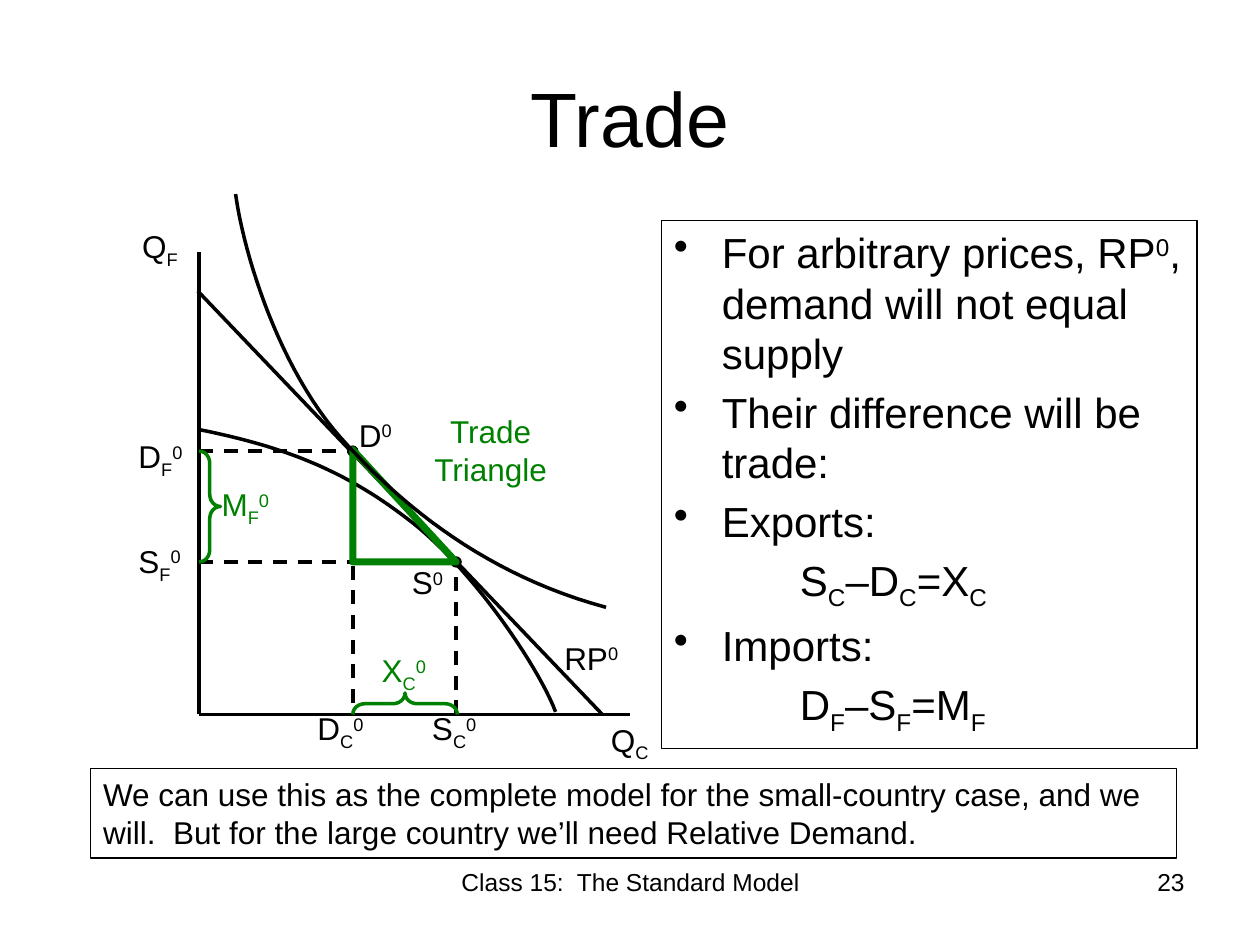
from typing import NamedTuple

import pptx
import pptx.dml.color
import pptx.enum.dml
import pptx.enum.shapes
import pptx.enum.text
import pptx.oxml
import pptx.oxml.ns
import pptx.util
from pptx.util import Inches, Pt

BLACK = pptx.dml.color.RGBColor(0x00, 0x00, 0x00)
GREEN = pptx.dml.color.RGBColor(0x00, 0x80, 0x00)
FONT = "Arial"
SHAPES = pptx.enum.shapes.MSO_SHAPE
ALIGN = pptx.enum.text.PP_ALIGN
ANCHOR = pptx.enum.text.MSO_ANCHOR

# Key places in the diagram, in inches
AXIS_X, AXIS_Y = 1.58, 5.67
DEMAND = (2.8, 3.58)
SUPPLY = (3.62, 4.46)


class Run(NamedTuple):
    text: str
    baseline: int = 0


SUB_C, SUB_F, SUP_0 = Run("C", -25), Run("F", -25), Run("0", 30)


class Label(NamedTuple):
    left: float
    top: float
    runs: list[Run]
    color: pptx.dml.color.RGBColor = BLACK


class Line(NamedTuple):
    start: tuple[float, float]
    end: tuple[float, float]
    dashed: bool = False


class BodyLine(NamedTuple):
    runs: list[Run]
    bulleted: bool = True


LABELS = [
    Label(4.75, 5.67, [Run("Q"), SUB_C]),
    Label(1.03, 1.75, [Run("Q"), SUB_F]),
    Label(2.42, 5.58, [Run("D"), SUB_C, SUP_0]),
    Label(1.0, 3.42, [Run("D"), SUB_F, SUP_0]),
    Label(1.0, 4.25, [Run("S"), SUB_F, SUP_0]),
    Label(3.33, 5.58, [Run("S"), SUB_C, SUP_0]),
    Label(3.17, 4.42, [Run("S"), SUP_0]),
    Label(2.75, 3.25, [Run("D"), SUP_0]),
    Label(4.38, 5.02, [Run("RP"), SUP_0]),
    Label(1.66, 3.8, [Run("M"), SUB_F, SUP_0], GREEN),
    Label(2.93, 5.12, [Run("X"), SUB_C, SUP_0], GREEN),
]

LINES = [
    Line((AXIS_X, AXIS_Y), (5, AXIS_Y)),
    Line((AXIS_X, AXIS_Y), (AXIS_X, 2)),
    Line((1.57, 2.31), (4.78, AXIS_Y)),
    Line((AXIS_X, DEMAND[1]), DEMAND, dashed=True),
    Line((DEMAND[0], 5.58), DEMAND, dashed=True),
    Line((AXIS_X, SUPPLY[1]), (3.58, SUPPLY[1]), dashed=True),
    Line((SUPPLY[0], AXIS_Y), (SUPPLY[0], 4.42), dashed=True),
]

# Each curve: a start point and two joined cubic Bezier pieces
PRODUCTION_FRONTIER = [
    (1.58, 3.41), (2.23, 3.54), (2.71, 3.72), (3.21, 4.1),
    (3.72, 4.47), (4.27, 5.28), (4.41, 5.65),
]
INDIFFERENCE_CURVE = [
    (4.81, 4.82), (3.88, 4.57), (3.2, 4.03), (2.71, 3.48),
    (2.22, 2.93), (1.94, 2.04), (1.87, 1.54),
]

BODY = [
    BodyLine([Run("For arbitrary prices, RP"), SUP_0,
              Run(", demand will not equal supply")]),
    BodyLine([Run("Their difference will be trade:")]),
    BodyLine([Run("Exports:")]),
    BodyLine([Run("S"), SUB_C, Run("–D"), SUB_C, Run("=X"), SUB_C], False),
    BodyLine([Run("Imports:")]),
    BodyLine([Run("D"), SUB_F, Run("–S"), SUB_F, Run("=M"), SUB_F], False),
]


def add_runs(paragraph, runs: list[Run], size: float, color=BLACK) -> None:
    for item in runs:
        run = paragraph.add_run()
        run.text = item.text
        run.font.name = FONT
        run.font.size = Pt(size)
        run.font.color.rgb = color
        if item.baseline:
            run._r.get_or_add_rPr().set("baseline", str(item.baseline * 1000))


def add_text(slide, box: tuple[float, float, float, float], runs: list[Run],
             size: float = 18, color=BLACK, align=ALIGN.LEFT,
             anchor=ANCHOR.TOP):
    shape = slide.shapes.add_textbox(*map(Inches, box))
    shape.text_frame.word_wrap = True
    shape.text_frame.vertical_anchor = anchor
    paragraph = shape.text_frame.paragraphs[0]
    paragraph.alignment = align
    add_runs(paragraph, runs, size, color)
    return shape


def outline(shape, color, width: float) -> None:
    shape.line.color.rgb = color
    shape.line.width = Pt(width)


def add_outlined(slide, kind, box: tuple[float, float, float, float],
                 color, width: float):
    shape = slide.shapes.add_shape(kind, *map(Inches, box))
    shape.shadow.inherit = False
    shape.fill.background()
    outline(shape, color, width)
    return shape


def add_line(slide, line: Line) -> None:
    connector = slide.shapes.add_connector(
        pptx.enum.shapes.MSO_CONNECTOR.STRAIGHT,
        *map(Inches, line.start + line.end))
    outline(connector, BLACK, 2)
    if line.dashed:
        connector.line.dash_style = pptx.enum.dml.MSO_LINE.DASH
    connector._element.spPr.append(pptx.oxml.parse_xml(
        f"<a:effectLst {pptx.oxml.ns.nsdecls('a')}/>"))


def bezier_point(controls: list[tuple[float, float]], t: float):
    weights = ((1 - t) ** 3, 3 * t * (1 - t) ** 2, 3 * t * t * (1 - t), t ** 3)
    return tuple(sum(w * point[axis] for w, point in zip(weights, controls))
                 for axis in (0, 1))


def add_curve(slide, points: list[tuple[float, float]], steps: int = 24) -> None:
    """Draw joined cubic Bezier pieces as a fine open polyline."""
    builder = slide.shapes.build_freeform(*map(Inches, points[0]), scale=1.0)
    for first in range(0, len(points) - 1, 3):
        piece = points[first:first + 4]
        builder.add_line_segments(
            [tuple(map(Inches, bezier_point(piece, step / steps)))
             for step in range(1, steps + 1)], close=False)
    curve = builder.convert_to_shape()
    curve.shadow.inherit = False
    curve.fill.background()
    outline(curve, BLACK, 2)


def add_body(slide) -> None:
    shape = add_text(slide, (5.25, 1.75, 4.25, 4.19), [])
    outline(shape, BLACK, 0.75)
    frame = shape.text_frame
    for index, line in enumerate(BODY):
        paragraph = frame.add_paragraph() if index else frame.paragraphs[0]
        paragraph.space_before = Pt(4.8)
        add_runs(paragraph, line.runs, 24)
        properties = paragraph._p.get_or_add_pPr()
        properties.set("marL", str(Inches(0.38 if line.bulleted else 1)))
        if line.bulleted:
            properties.set("indent", str(Inches(-0.38)))
            properties.append(pptx.oxml.parse_xml(
                f'<a:buChar {pptx.oxml.ns.nsdecls("a")} char="•"/>'))


def add_diagram(slide) -> None:
    for line in LINES:
        add_line(slide, line)
    for x, y in (DEMAND, SUPPLY):
        dot = add_outlined(slide, SHAPES.OVAL,
                           (x - 0.04, y - 0.04, 0.08, 0.08), BLACK, 0.75)
        dot.fill.solid()
        dot.fill.fore_color.rgb = BLACK
    add_curve(slide, PRODUCTION_FRONTIER)
    for box, rotation in (((1.58, 3.58, 0.17, 0.88), 0),
                          ((3.13, 5.17, 0.17, 0.83), 270)):
        brace = add_outlined(slide, SHAPES.RIGHT_BRACE, box, GREEN, 2)
        brace.rotation = rotation
        brace.adjustments[0] = 0.56
        brace.adjustments[1] = 0.5
    add_outlined(slide, SHAPES.RIGHT_TRIANGLE, (2.8, 3.57, 0.82, 0.89), GREEN, 4)
    add_curve(slide, INDIFFERENCE_CURVE)
    for label in LABELS:
        add_text(slide, (label.left, label.top, 0.75, 0.4), label.runs,
                 color=label.color)
    add_text(slide, (3.18, 3.22, 1.43, 0.71), [Run("Trade Triangle")],
             color=GREEN, align=ALIGN.CENTER)


def main() -> None:
    presentation = pptx.Presentation()
    presentation.slide_width, presentation.slide_height = Inches(10), Inches(7.5)
    slide = presentation.slides.add_slide(presentation.slide_layouts[6])
    add_text(slide, (0.5, 0.3, 9, 1.25), [Run("Trade")], 44,
             align=ALIGN.CENTER, anchor=ANCHOR.MIDDLE)
    add_body(slide)
    add_diagram(slide)
    note = add_text(slide, (0.72, 6.1, 8.62, 0.71), [Run(
        "We can use this as the complete model for the small-country case, and "
        "we will.  But for the large country we’ll need Relative Demand.")])
    outline(note, BLACK, 0.75)
    add_text(slide, (3.42, 6.83, 3.17, 0.52),
             [Run("Class 15:  The Standard Model")], 14, align=ALIGN.CENTER)
    add_text(slide, (7.17, 6.83, 2.33, 0.52), [Run("23")], 14, align=ALIGN.RIGHT)
    presentation.save("out.pptx")


if __name__ == "__main__":
    main()
